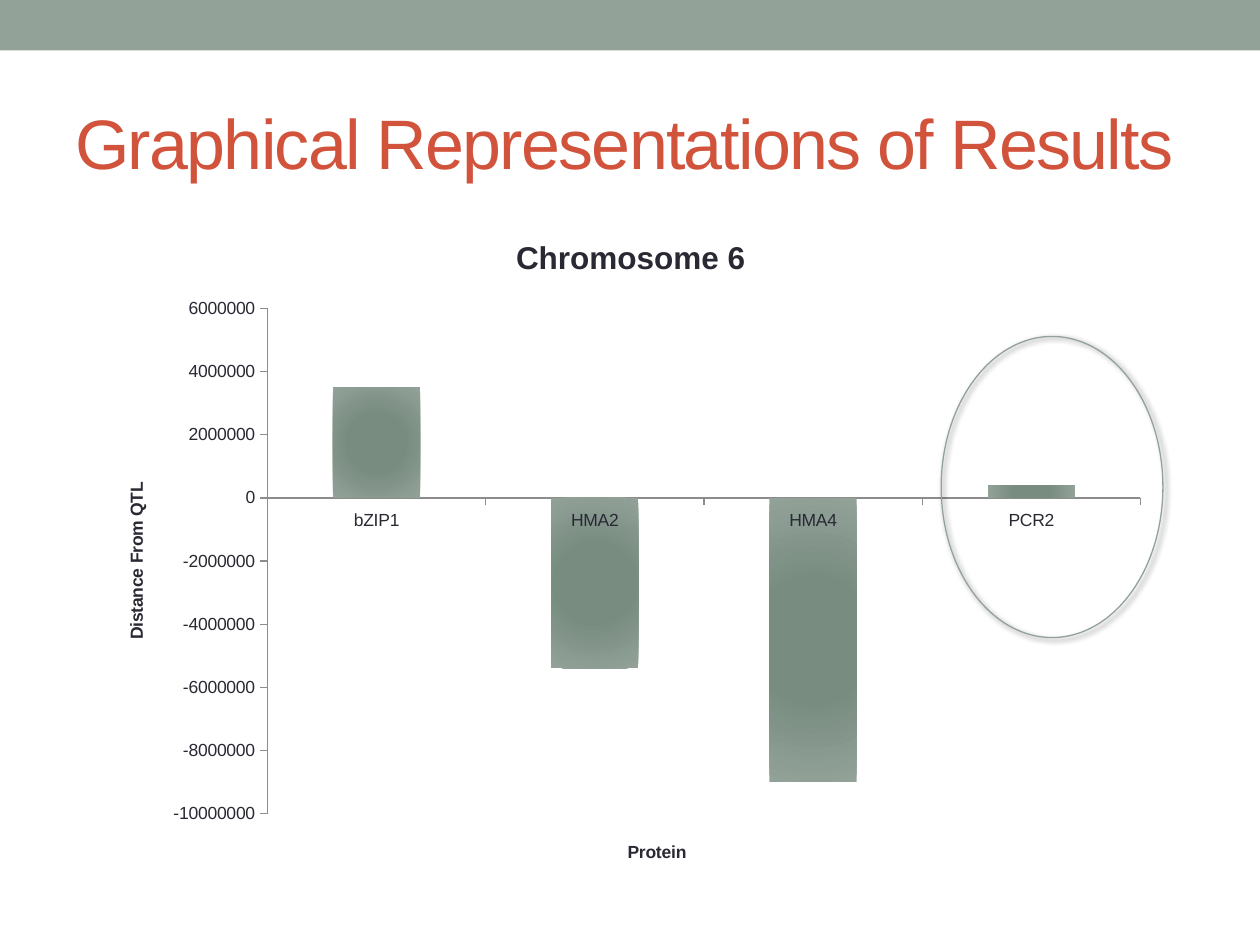
import lxml.etree
import pptx
import pptx.chart.data
import pptx.dml.color
import pptx.enum.chart
import pptx.enum.shapes
import pptx.enum.text
import pptx.oxml
import pptx.oxml.ns
import pptx.util

Inches = pptx.util.Inches
Pt = pptx.util.Pt

# Content
TITLE = "Graphical Representations of Results"
CHART_TITLE = "Chromosome 6"
CATEGORY_TITLE = "Protein"
VALUE_TITLE = "Distance From QTL"
DISTANCES = {"bZIP1": 3500000, "HMA2": -5400000, "HMA4": -9000000, "PCR2": 400000}

# Left, top, width, height in inches
BAND_AT = (0, 0, 10, 0.4)
TITLE_AT = (0.5, 0.58, 9, 1.08)
CHART_AT = (0.79, 1.67, 8.43, 5.38)
RING_AT = (7.47, 2.67, 1.76, 2.39)

THEME = {
    "font": "Arial",
    "sage": "93A299", "deep_sage": "788C80", "red": "D2533C",
    "ink": "292934", "axis": "8C8C8C",
    "title": 40, "chart_title": 18, "chart": 10,
}
A_NS = 'xmlns:a="http://schemas.openxmlformats.org/drawingml/2006/main"'


def color(name):
    return pptx.dml.color.RGBColor.from_string(THEME[name])


def place(at):
    return [Inches(length) for length in at]


def style(font, size, ink, bold=False):
    font.name = THEME["font"]
    font.size = Pt(THEME[size])
    font.bold = bold
    font.color.rgb = color(ink)


def write_title(owner, text, size):
    frame = owner.text_frame
    span = frame.paragraphs[0].add_run()
    span.text = text
    style(span.font, size, "ink", bold=True)


def add_band(page):
    band = page.shapes.add_shape(pptx.enum.shapes.MSO_SHAPE.RECTANGLE, *place(BAND_AT))
    band.shadow.inherit = False
    band.fill.solid()
    band.fill.fore_color.rgb = color("sage")
    band.line.fill.background()


def add_title(page):
    box = page.shapes.add_textbox(*place(TITLE_AT))
    frame = box.text_frame
    frame.word_wrap = True
    frame.vertical_anchor = pptx.enum.text.MSO_ANCHOR.MIDDLE
    span = frame.paragraphs[0].add_run()
    span.text = TITLE
    style(span.font, "title", "red")
    span.font._element.set("spc", "-100")


def add_chart(page):
    data = pptx.chart.data.CategoryChartData()
    data.categories = list(DISTANCES)
    data.add_series("Series 1", list(DISTANCES.values()))
    kind = pptx.enum.chart.XL_CHART_TYPE.COLUMN_CLUSTERED
    chart = page.shapes.add_chart(kind, *place(CHART_AT), data).chart
    chart.has_legend = False
    style(chart.font, "chart", "ink")
    chart.has_title = True
    write_title(chart.chart_title, CHART_TITLE, "chart_title")
    chart.chart_title.include_in_layout = False

    # Axes
    for axis, text in ((chart.category_axis, CATEGORY_TITLE), (chart.value_axis, VALUE_TITLE)):
        axis.has_major_gridlines = False
        axis.major_tick_mark = pptx.enum.chart.XL_TICK_MARK.OUTSIDE
        axis.format.line.color.rgb = color("axis")
        axis.format.line.width = Pt(0.75)
        write_title(axis.axis_title, text, "chart")
    chart.value_axis.minimum_scale = -10000000
    chart.value_axis.maximum_scale = 6000000
    chart.value_axis.major_unit = 2000000
    chart.value_axis.tick_labels.number_format = "General"
    chart.value_axis.tick_labels.number_format_is_linked = False

    # Bars shaded from a dark centre to a lighter rim
    plot = chart.plots[0]
    plot.gap_width = 150
    plot.vary_by_categories = False
    bars = plot.series[0]
    bars.invert_if_negative = False
    bars.format.fill.solid()
    bars.format.fill.fore_color.rgb = color("sage")
    properties = bars._element.find(pptx.oxml.ns.qn("c:spPr"))
    solid = properties.find(pptx.oxml.ns.qn("a:solidFill"))
    properties.replace(solid, pptx.oxml.parse_xml(
        f'<a:gradFill {A_NS} rotWithShape="1"><a:gsLst>'
        f'<a:gs pos="0"><a:srgbClr val="{THEME["deep_sage"]}"/></a:gs>'
        f'<a:gs pos="40000"><a:srgbClr val="{THEME["deep_sage"]}"/></a:gs>'
        f'<a:gs pos="100000"><a:srgbClr val="{THEME["sage"]}"/></a:gs></a:gsLst>'
        '<a:path path="circle"><a:fillToRect l="50000" t="50000" r="50000" b="50000"/>'
        '</a:path></a:gradFill>'))


def add_ring(page):
    ring = page.shapes.add_shape(pptx.enum.shapes.MSO_SHAPE.OVAL, *place(RING_AT))
    ring.fill.background()
    ring.line.color.rgb = color("sage")
    ring.line.width = Pt(0.75)
    ring.shadow.inherit = False
    effects = ring._element.spPr.find(pptx.oxml.ns.qn("a:effectLst"))
    effects.append(pptx.oxml.parse_xml(
        f'<a:outerShdw {A_NS} blurRad="{Pt(3)}" dist="{Pt(2)}" dir="{45 * 60000}" '
        'algn="tl" rotWithShape="0"><a:srgbClr val="000000"><a:alpha val="60000"/>'
        '</a:srgbClr></a:outerShdw>'))


def main():
    deck = pptx.Presentation()
    deck.slide_width, deck.slide_height = Inches(10), Inches(7.5)
    page = deck.slides.add_slide(deck.slide_layouts[6])
    add_band(page)
    add_title(page)
    add_chart(page)
    add_ring(page)
    deck.save("out.pptx")


if __name__ == "__main__":
    main()
